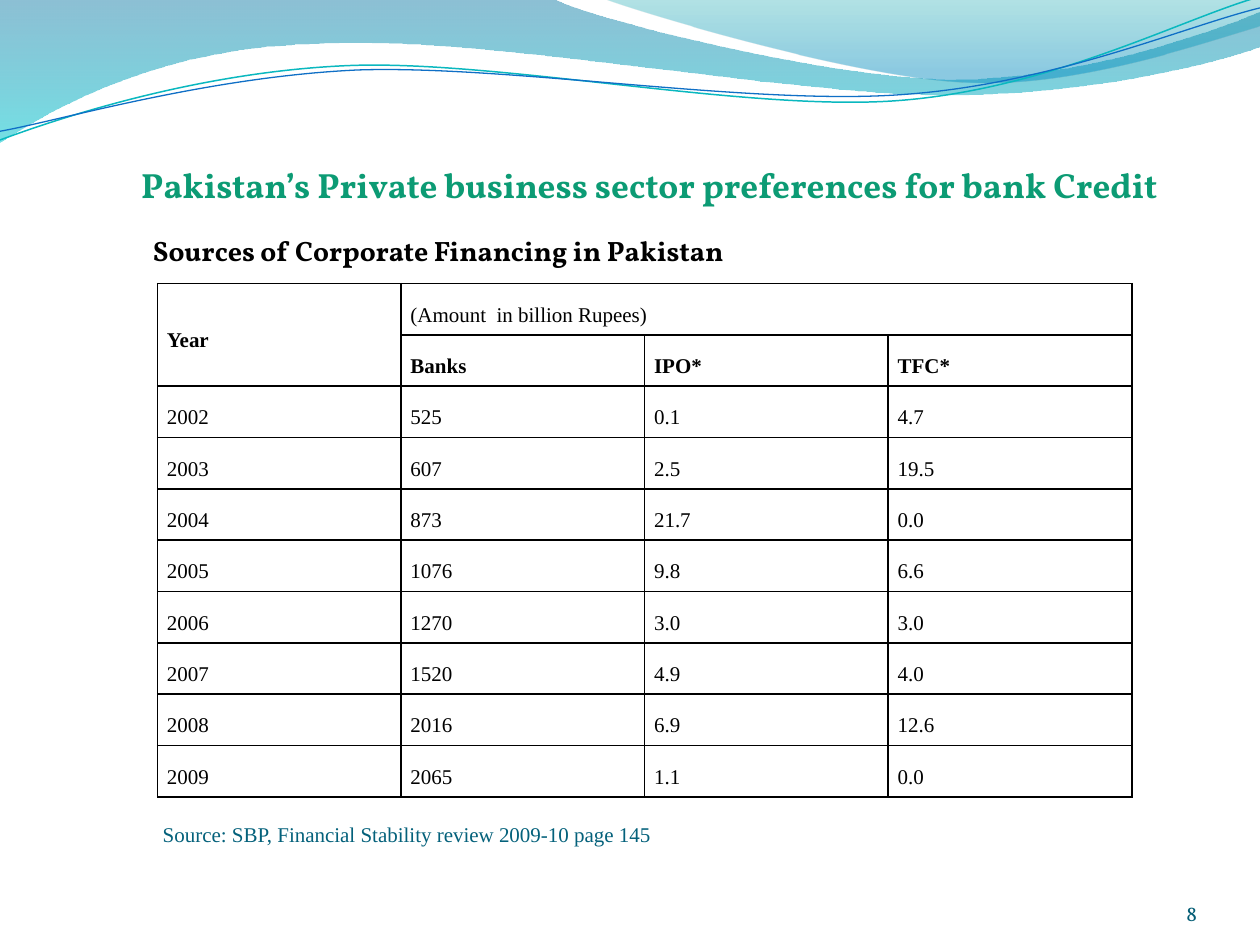
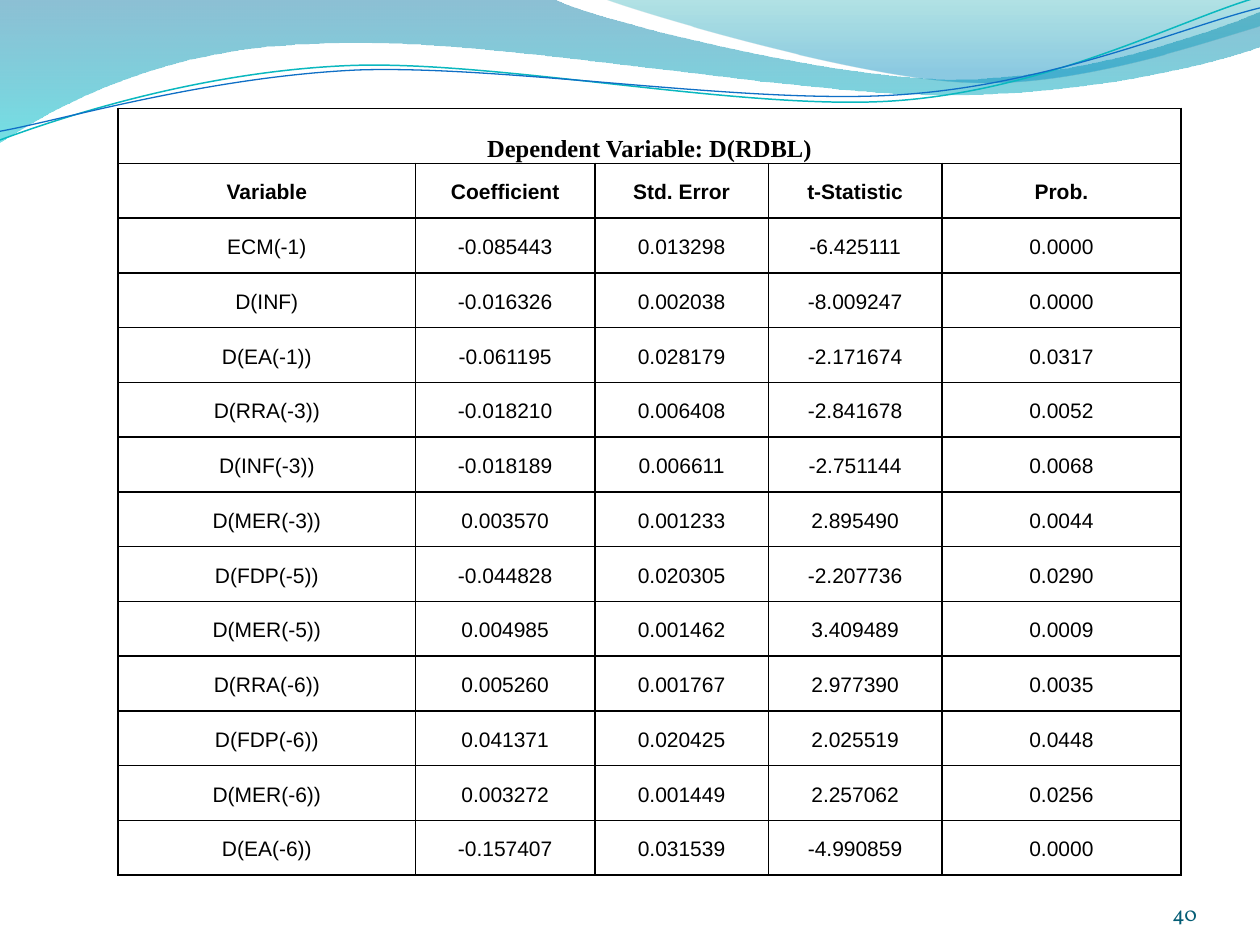
from dataclasses import dataclass

from lxml.etree import Element, SubElement
from pptx import Presentation
from pptx.dml.color import RGBColor
from pptx.enum.text import MSO_ANCHOR as Anchor, MSO_AUTO_SIZE as AutoSize, PP_ALIGN as Align
from pptx.oxml.ns import qn
from pptx.util import Pt

# ---- content ----
HEADING = "Pakistan’s Private business sector preferences for bank Credit"
SUBHEADING = "Sources of Corporate Financing in Pakistan"
SOURCE = "Source: SBP, Financial Stability review 2009-10 page 145"

FINANCING = [
    ("Year", "(Amount  in billion Rupees)", "", ""),
    ("", "Banks", "IPO*", "TFC*"),
    ("2002", "525", "0.1", "4.7"),
    ("2003", "607", "2.5", "19.5"),
    ("2004", "873", "21.7", "0.0"),
    ("2005", "1076", "9.8", "6.6"),
    ("2006", "1270", "3.0", "3.0"),
    ("2007", "1520", "4.9", "4.0"),
    ("2008", "2016", "6.9", "12.6"),
    ("2009", "2065", "1.1", "0.0"),
]

REGRESSION = [
    ("Dependent Variable: D(RDBL)", "", "", "", ""),
    ("Variable", "Coefficient", "Std. Error", "t-Statistic", "Prob."),
    ("ECM(-1)", "-0.085443", "0.013298", "-6.425111", "0.0000"),
    ("D(INF)", "-0.016326", "0.002038", "-8.009247", "0.0000"),
    ("D(EA(-1))", "-0.061195", "0.028179", "-2.171674", "0.0317"),
    ("D(RRA(-3))", "-0.018210", "0.006408", "-2.841678", "0.0052"),
    ("D(INF(-3))", "-0.018189", "0.006611", "-2.751144", "0.0068"),
    ("D(MER(-3))", "0.003570", "0.001233", "2.895490", "0.0044"),
    ("D(FDP(-5))", "-0.044828", "0.020305", "-2.207736", "0.0290"),
    ("D(MER(-5))", "0.004985", "0.001462", "3.409489", "0.0009"),
    ("D(RRA(-6))", "0.005260", "0.001767", "2.977390", "0.0035"),
    ("D(FDP(-6))", "0.041371", "0.020425", "2.025519", "0.0448"),
    ("D(MER(-6))", "0.003272", "0.001449", "2.257062", "0.0256"),
    ("D(EA(-6))", "-0.157407", "0.031539", "-4.990859", "0.0000"),
]

# Outlines in points: a pair is a corner, six numbers are a Bezier curve.
# Each gradient stop is (position, colour, opacity in percent).
BANDS = [
    ([(0, 0), (317, -0.5), (343, 12, 478, 45, 546, 45), (614, 45, 690, 19, 720, 6.5),
      (721, 26), (708, 32, 626, 55, 537, 54), (448, 54, 275, 20, 185, 24.5),
      (93, 26, 33, 60, -0.5, 81.5)],
     [(0, "0074A1", 45), (1, "00C6CF", 55)]),
    ([(345, -0.5), (367, 8, 491, 45, 554, 47), (616, 50, 692, 23, 720, 15), (720, 0)],
     [(0, "00A1A9", 30), (0.8, "008BBF", 45)]),
]
WAVES = [
    ([(0, 80), (35, 67, 114, 41, 199, 37.5), (284, 34, 427, 64, 513, 57.5),
      (600, 51, 675, 11, 718.5, -1.5)], "0AB8BF", 0.85),
    ([(0, 75), (34, 69, 118, 44, 204, 40), (290, 37, 430, 60.5, 516, 54),
      (602, 48, 677, 15, 720, 4.5)], "0F6FC6", 0.75),
]


@dataclass(frozen=True)
class Theme:
    heading: str = "0C9B74"
    source: str = "04617B"
    number: str = "045D75"
    ink: str = "000000"
    display: str = "Vollkorn"
    serif: str = "Times New Roman"
    sans: str = "Arial"
    heading_size: int = 20
    subheading_size: int = 16
    caption_size: int = 14
    text_size: int = 12


T = Theme()


def style(p, name, size, color, bold=False, align=None):
    f = p.font
    f.name, f.size, f.bold = name, Pt(size), bold
    f.color.rgb = RGBColor.from_string(color)
    p.alignment = align


def add_outline(s, path, close):
    """Build the outline through all its points, then bend the curved parts."""
    first, *rest = [(Pt(x), Pt(y)) for part in path for x, y in zip(part[::2], part[1::2])]
    builder = s.shapes.build_freeform(*first)
    builder.add_line_segments(rest, close=close)
    sp = builder.convert_to_shape()
    sp.shadow.inherit = False
    segments = iter(list(sp.element.iter(qn("a:lnTo"))))
    for part in path[1:]:
        lines = [next(segments) for _ in range(len(part) // 2)]
        if len(lines) == 3:
            curve = Element(qn("a:cubicBezTo"))
            lines[0].addprevious(curve)
            for line in lines:
                curve.append(line[0])
                line.getparent().remove(line)
    return sp


def add_band(s, path, stops):
    sp = add_outline(s, path, True)
    sp.line.fill.background()
    sp.fill.gradient()
    sp.fill.gradient_angle = 270
    for stop, (position, color, _) in zip(sp.fill.gradient_stops, stops):
        stop.position = position
        stop.color.rgb = RGBColor.from_string(color)
    for clr, (_, _, opacity) in zip(sp.element.iter(qn("a:srgbClr")), stops):
        SubElement(clr, qn("a:alpha"), val=str(opacity * 1000))
    return sp


def add_wave(s, path, color, width):
    sp = add_outline(s, path, False)
    sp.fill.background()
    sp.line.color.rgb = RGBColor.from_string(color)
    sp.line.width = Pt(width)
    return sp


def decorate_master(prs, s):
    """Draw the header on a slide, then move it to the master for all slides."""
    header = [add_band(s, *band) for band in BANDS] + [add_wave(s, *wave) for wave in WAVES]
    for sp in header:
        prs.slide_master.shapes.element.append(sp.element)


def add_label(s, text, box, font, color, align):
    tf = s.shapes.add_textbox(*map(Pt, box)).text_frame
    tf.word_wrap = True
    tf.vertical_anchor = Anchor.BOTTOM
    tf.margin_left = tf.margin_right = tf.margin_top = tf.margin_bottom = 0
    p = tf.paragraphs[0]
    p.text = text
    style(p, font, T.text_size, color, align=align)


def add_page_number(s, number):
    add_label(s, number, (624, 500.5, 60, 28.5), T.display, T.number, Align.RIGHT)


def add_borders(cell):
    tc_pr = cell._tc.get_or_add_tcPr()
    for side in ("lnL", "lnR", "lnT", "lnB"):
        ln = SubElement(tc_pr, qn(f"a:{side}"), w=str(Pt(1)))
        SubElement(SubElement(ln, qn("a:solidFill")), qn("a:srgbClr"), val=T.ink)


def add_grid(s, rows, left, top, widths, row_height, margin, font, align, spacing):
    """Add a ruled table whose first two rows are headings."""
    table = s.shapes.add_table(len(rows), len(widths), Pt(left), Pt(top),
                               Pt(sum(widths)), Pt(row_height * len(rows))).table
    table.first_row = table.horz_banding = False
    for column, width in zip(table.columns, widths):
        column.width = Pt(width)
    for i, row in enumerate(rows):
        table.rows[i].height = Pt(row_height)
        for j, text in enumerate(row):
            cell = table.cell(i, j)
            add_borders(cell)
            cell.fill.background()
            cell.vertical_anchor = Anchor.MIDDLE
            cell.margin_left = cell.margin_right = Pt(margin)
            cell.margin_top = cell.margin_bottom = 0
            p = cell.text_frame.paragraphs[0]
            p.text = text
            p.line_spacing = spacing
            style(p, font, T.text_size, T.ink, i < 2, align)
    return table


def add_financing_slide(prs):
    s = prs.slides.add_slide(prs.slide_layouts[5])
    title = s.shapes.title
    title.left, title.top, title.width, title.height = map(Pt, (56.2, 90, 630, 116.6))
    tf = title.text_frame
    tf.auto_size = AutoSize.NONE
    tf.vertical_anchor = Anchor.TOP
    tf.text = HEADING
    style(tf.paragraphs[0], T.display, T.heading_size, T.heading, True, Align.CENTER)
    p = tf.add_paragraph()
    p.text = SUBHEADING
    p.space_before = Pt(16)
    style(p, T.display, T.subheading_size, T.ink, True, Align.LEFT)
    p._p.get_or_add_pPr().set("marL", str(Pt(24)))

    table = add_grid(s, FINANCING, 90, 162, [139.2] * 4, 29.35, 5.4,
                     T.serif, Align.JUSTIFY, 1.5)
    for cell in table.iter_cells():
        p = cell.text_frame.paragraphs[0]
        if p.text != "Year":
            p.space_before, p.space_after = Pt(12), Pt(18)
    table.cell(0, 1).text_frame.paragraphs[0].font.bold = False
    table.cell(0, 0).merge(table.cell(1, 0))
    table.cell(0, 1).merge(table.cell(0, 3))

    add_label(s, SOURCE, (93, 462, 556, 22), T.serif, T.source, Align.LEFT)
    add_page_number(s, "8")
    return s


def add_regression_slide(prs):
    s = prs.slides.add_slide(prs.slide_layouts[6])
    table = add_grid(s, REGRESSION, 67.5, 62, [170, 102.4, 99.2, 99.2, 136.6], 31.32, 0,
                     T.sans, Align.CENTER, 1.15)
    caption = table.cell(0, 0)
    caption.merge(table.cell(0, 4))
    caption.vertical_anchor = Anchor.BOTTOM
    style(caption.text_frame.paragraphs[0], T.serif, T.caption_size, T.ink, True, Align.CENTER)
    add_page_number(s, "40")


def main():
    prs = Presentation()
    prs.slide_width, prs.slide_height = Pt(720), Pt(540)
    decorate_master(prs, add_financing_slide(prs))
    add_regression_slide(prs)
    prs.save("out.pptx")


if __name__ == "__main__":
    main()
